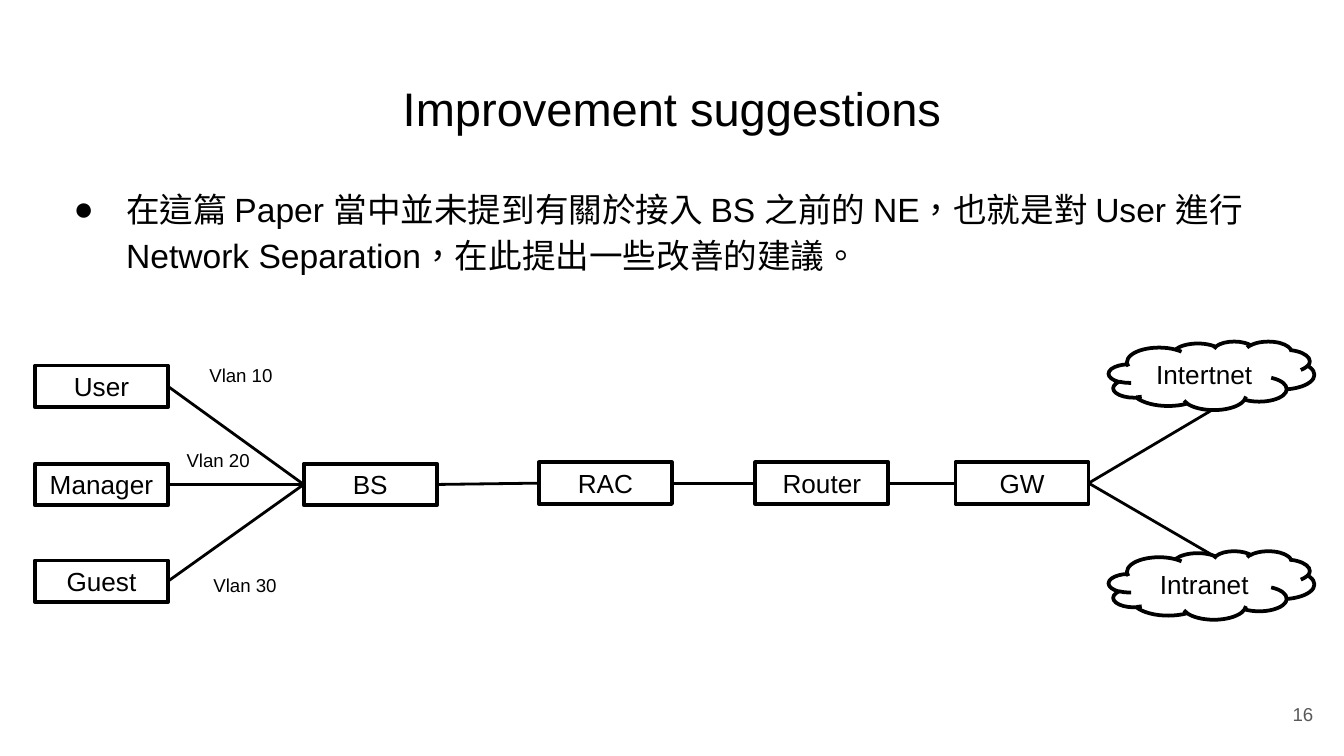
from lxml.etree import SubElement
from pptx import Presentation
from pptx.dml.color import RGBColor
from pptx.enum.lang import MSO_LANGUAGE_ID
from pptx.enum.shapes import MSO_CONNECTOR, MSO_SHAPE
from pptx.enum.text import MSO_ANCHOR, MSO_AUTO_SIZE, PP_ALIGN
from pptx.oxml.ns import qn
from pptx.util import Emu, Pt

EMU_PER_PX = 9144  # 100 px to the inch
COLORS = {"ink": "000000", "paper": "FFFFFF", "muted": "595959"}
FONT = "Arial"
NODE_SIZE = (99, 31)
CLOUD_SIZE = (153, 51)
LEFT_SITE, RIGHT_SITE = 1, 3

# Name: left, top
NODES = {
    "User": (26, 272),
    "Manager": (26, 345),
    "Guest": (26, 417),
    "BS": (226, 345),
    "RAC": (401, 344),
    "Router": (562, 344),
    "GW": (711, 344),
}
LINKS = [("User", "BS"), ("Manager", "BS"), ("Guest", "BS"),
         ("BS", "RAC"), ("RAC", "Router"), ("Router", "GW")]
VLAN_LABELS = {"Vlan 10": (146, 266), "Vlan 20": (129, 329), "Vlan 30": (149, 422)}
# Name: top, height at which the link from GW meets the cloud
CLOUDS = {"Intertnet": (254, 305), "Intranet": (410, 413)}
CLOUD_LEFT, CLOUD_LINK_X = 825, 902

SUGGESTION = ("在這篇 Paper 當中並未提到有關於接入 BS 之前的 NE，也就是對 User 進行 "
              "Network Separation，在此提出一些改善的建議。")


def px(length):
    return Emu(length * EMU_PER_PX)


def color(name):
    return RGBColor.from_string(COLORS[name])


def write_text(box, text, *, size, ink="ink", align=PP_ALIGN.LEFT,
               anchor=MSO_ANCHOR.TOP, inset=(10, 5), wrap=True, language=None):
    frame = box.text_frame
    frame.word_wrap = wrap
    frame.auto_size = MSO_AUTO_SIZE.NONE
    frame.vertical_anchor = anchor
    frame.margin_left = frame.margin_right = px(inset[0])
    frame.margin_top = frame.margin_bottom = px(inset[1])
    para = frame.paragraphs[0]
    para.alignment = align
    span = para.add_run()
    span.text = text
    span.font.name = FONT
    span.font.size = Pt(size)
    span.font.color.rgb = color(ink)
    span.font.language_id = language
    return para


def add_label(page, text, left, top, width, height, **text_format):
    box = page.shapes.add_textbox(px(left), px(top), px(width), px(height))
    return write_text(box, text, **text_format)


def add_bullet(para, indent, hanging):
    properties = para._p.get_or_add_pPr()
    properties.set("marL", str(px(indent)))
    properties.set("indent", str(-px(hanging)))
    bullet_color = SubElement(properties, qn("a:buClr"))
    SubElement(bullet_color, qn("a:srgbClr"), val=COLORS["ink"])
    SubElement(properties, qn("a:buFont"), typeface=FONT)
    SubElement(properties, qn("a:buChar"), char="●")


def add_node(page, kind, text, left, top, size):
    node = page.shapes.add_shape(kind, px(left), px(top), px(size[0]), px(size[1]))
    node.shadow.inherit = False
    node.fill.solid()
    node.fill.fore_color.rgb = color("paper")
    node.line.color.rgb = color("ink")
    node.line.width = Pt(2)
    write_text(node, text, size=14, align=PP_ALIGN.CENTER,
               anchor=MSO_ANCHOR.MIDDLE, inset=(0, 0), wrap=False)
    return node


def add_link(page, source, target=None, end=(0, 0)):
    """Join the right side of source to the left side of target, or to a point."""
    link = page.shapes.add_connector(MSO_CONNECTOR.STRAIGHT, 0, 0, px(end[0]), px(end[1]))
    link.begin_connect(source, RIGHT_SITE)
    if target is not None:
        link.end_connect(target, LEFT_SITE)
    link.line.color.rgb = color("ink")
    link.line.width = Pt(1.5)
    SubElement(link._element.spPr, qn("a:effectLst"))


def add_title(page, text):
    title = page.shapes.title
    title.left, title.top, title.width, title.height = map(px, (34, 49, 932, 63))
    write_text(title, text, size=25.2, align=PP_ALIGN.CENTER, inset=(10, 10))


def add_network(page):
    nodes = {name: add_node(page, MSO_SHAPE.RECTANGLE, name, left, top, NODE_SIZE)
             for name, (left, top) in NODES.items()}
    for source, target in LINKS:
        add_link(page, nodes[source], nodes[target])
    for name, (left, top) in VLAN_LABELS.items():
        add_label(page, name, left, top, 76, 27, size=10)
    for name, (top, link_y) in CLOUDS.items():
        add_node(page, MSO_SHAPE.CLOUD, name, CLOUD_LEFT, top, CLOUD_SIZE)
        add_link(page, nodes["GW"], end=(CLOUD_LINK_X, link_y))


def main():
    deck = Presentation()
    deck.slide_width = px(1000)
    deck.slide_height = deck.slide_width * 9 // 16
    page = deck.slides.add_slide(deck.slide_layouts[5])

    # Title and suggestion
    add_title(page, "Improvement suggestions")
    para = add_label(page, SUGGESTION, 34, 126, 932, 374, size=18, inset=(10, 10),
                     language=MSO_LANGUAGE_ID.TRADITIONAL_CHINESE)
    para.line_spacing = 1.15
    add_bullet(para, indent=50, hanging=39)

    # Network from the users to the clouds
    add_network(page)

    # Page number
    add_label(page, "16", 927, 510, 60, 43, size=10, ink="muted",
              align=PP_ALIGN.RIGHT, anchor=MSO_ANCHOR.MIDDLE, inset=(10, 10))

    deck.save("out.pptx")


if __name__ == "__main__":
    main()
